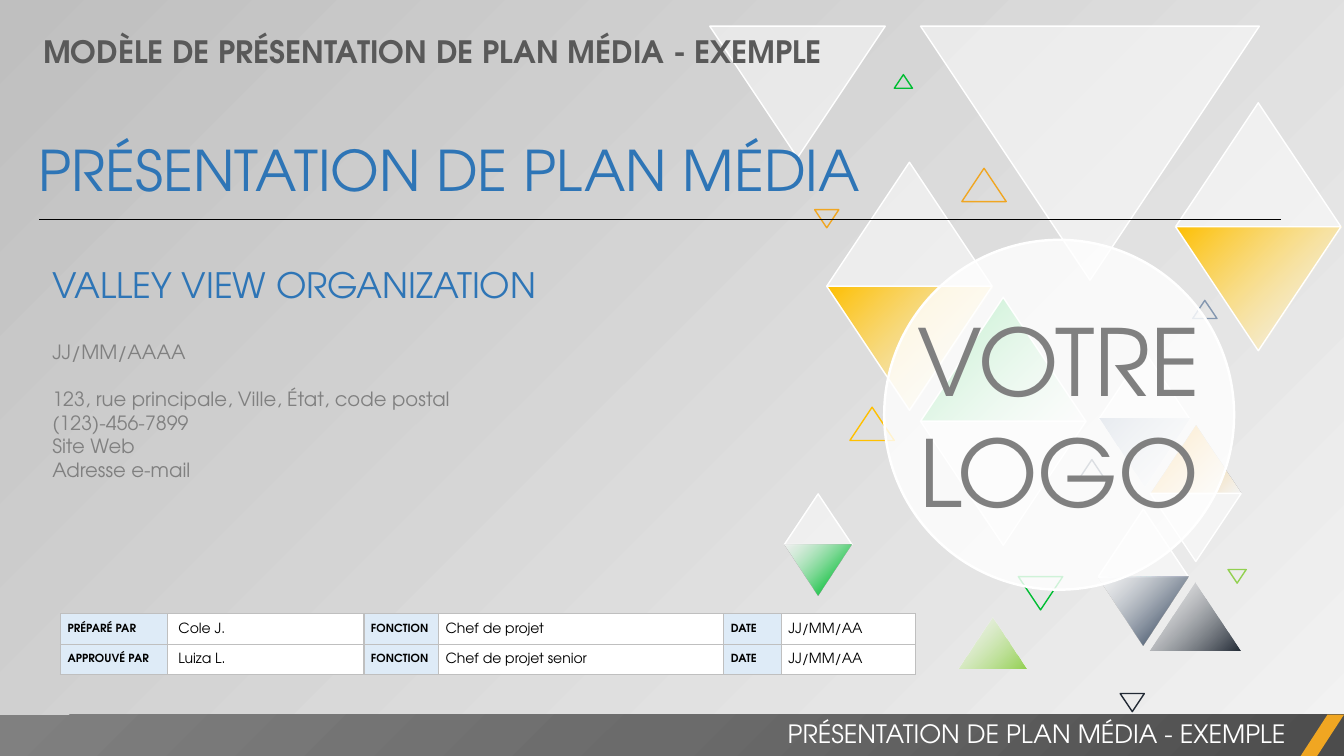
from dataclasses import dataclass

from pptx import Presentation, util as u
from pptx.dml.color import RGBColor
from pptx.enum import shapes, text
from pptx.oxml import ns, parse_xml


@dataclass(frozen=True)
class Theme:
    font: str = "TeX Gyre Adventor"
    white: str = "FFFFFF"
    black: str = "000000"
    blue: str = "2E75B6"
    heading: str = "595959"
    gray: str = "808080"
    border: str = "BFBFBF"
    backdrop: str = "F2F2F2"
    band_dark: str = "4C4C4C"
    band_middle: str = "6B6B6B"
    label: str = "DEEBF7"
    orange: str = "F0A622"
    gold: str = "FFC000"
    green: str = "00BD32"
    lime: str = "92D050"
    navy: str = "44546A"
    steel: str = "8497B0"
    ink: str = "222A35"
    title_size: int = 40
    logo_size: int = 66
    organization_size: int = 25
    heading_size: int = 22
    footer_size: int = 18
    body_size: int = 14
    cell_size: int = 10
    label_size: int = 8


THEME = Theme()
COLUMNS, ROWS = 1333, 750
CELL = u.Inches(0.01)  # side of one square grid cell
DIAGONAL = '<a:lin ang="13500000" scaled="0"/>'
CORNER = '<a:path path="circle"><a:fillToRect l="100000" t="100000"/></a:path>'


@dataclass(frozen=True)
class Box:
    """A region measured in grid columns and rows."""
    left: float
    top: float
    width: float
    height: float

    def inner(self, left, top, width, height):
        return Box(self.left + left, self.top + top, width, height)

    def lengths(self):
        return [round(n * CELL) for n in (self.left, self.top, self.width, self.height)]


def rgb(color):
    return RGBColor.from_string(color)


def write(frame, content, size, color, bold=False, align=text.PP_ALIGN.LEFT,
          before=0, spacing=None):
    paragraph = frame.add_paragraph() if frame.text else frame.paragraphs[0]
    paragraph.alignment, paragraph.space_before = align, u.Pt(before)
    if spacing:
        paragraph.line_spacing = spacing
    run = paragraph.add_run()
    run.text = content
    run.font.name, run.font.size, run.font.bold = THEME.font, u.Pt(size), bold
    run.font.color.rgb = rgb(color)


def text_box(slide, box):
    frame = slide.shapes.add_textbox(*box.lengths()).text_frame
    frame.word_wrap = True
    return frame


def paint_gradient(fill, properties, stops, direction):
    """Stops are (position %, color, opacity %)."""
    fill.gradient()
    marks = "".join(
        f'<a:gs pos="{position * 1000}"><a:srgbClr val="{color}">'
        f'<a:alpha val="{opacity * 1000}"/></a:srgbClr></a:gs>'
        for position, color, opacity in stops)
    properties.replace(properties.find(ns.qn("a:gradFill")), parse_xml(
        f'<a:gradFill {ns.nsdecls("a")} rotWithShape="1"><a:gsLst>{marks}</a:gsLst>'
        f'{direction}</a:gradFill>'))


def add_shape(slide, kind, box, fill=None, opacity=100, line=None, weight=1):
    """Fill is a color, a list of gradient stops or None."""
    shape = slide.shapes.add_shape(kind, *box.lengths())
    shape.shadow.inherit = False
    if fill is None:
        shape.fill.background()
    elif isinstance(fill, list):
        paint_gradient(shape.fill, shape.element.spPr, fill, DIAGONAL)
    else:
        shape.fill.solid()
        shape.fill.fore_color.rgb = rgb(fill)
        color = shape.element.spPr.find(ns.qn("a:solidFill"))[0]
        color.append(parse_xml(f'<a:alpha {ns.nsdecls("a")} val="{opacity * 1000}"/>'))
    if line:
        shape.line.color.rgb, shape.line.width = rgb(line), u.Pt(weight)
    else:
        shape.line.fill.background()
    return shape


def triangle(slide, box, left, top, width, down, **style):
    shape = add_shape(slide, shapes.MSO_SHAPE.ISOSCELES_TRIANGLE,
                      box.inner(left, top, width, width * 0.75), **style)
    shape.rotation = 180 if down else 0


def triangle_field(slide, box):
    def fade_out(color):
        return [(0, color, 100), (100, THEME.white, 50)]

    def fade_in(color):
        return [(0, THEME.white, 50), (82, color, 100)]

    def filled(left, top, width, down, fill):
        outlined = width > 100 or fill == THEME.white
        triangle(slide, box, left, top, width, down, fill=fill,
                 opacity=50, line=THEME.white if outlined else None)

    # Diamonds: one triangle above its mirror
    for left, top, width, upper, lower in (
            (120, 161, 164, THEME.white, fade_out(THEME.gold)),
            (213, 295, 164, fade_in(THEME.green), THEME.white),
            (389, 505, 90, THEME.white, fade_in(THEME.navy)),
            (390, 348, 90, THEME.white, fade_out(THEME.steel)),
            (441, 422, 90, fade_in(THEME.orange), THEME.white),
            (78, 490, 67, THEME.white, fade_in(THEME.green)),
            (466, 102, 164, THEME.white, fade_out(THEME.gold))):
        filled(left, top, width, False, upper)
        filled(left, top + width * 0.75, width, True, lower)
    # Single filled triangles
    filled(213, 26, 336, True, THEME.white)
    filled(4, 26, 174, True, THEME.white)
    filled(440, 578, 90, False, fade_out(THEME.ink))
    filled(251, 613, 67, False, fade_out(THEME.lime))
    # Small outlines
    for left, top, width, down, color in (
            (310, 572, 44, True, THEME.green), (143, 404, 44, False, THEME.gold),
            (371, 456, 24, False, THEME.navy), (411, 688, 24, True, THEME.ink),
            (108, 208, 24, True, THEME.orange), (483, 298, 24, False, THEME.steel),
            (187, 74, 18, False, THEME.green), (518, 565, 18, True, THEME.lime),
            (254, 167, 44, False, THEME.orange)):
        triangle(slide, box, left, top, width, down, line=color)


def header(slide, box):
    write(text_box(slide, box.inner(5, 0, 905, 47)),
          "MODÈLE DE PRÉSENTATION DE PLAN MÉDIA - EXEMPLE",
          THEME.heading_size, THEME.heading, bold=True)
    # Title, brought in front of the triangles
    title = slide.shapes.title
    title.left, title.top, title.width, title.height = box.inner(0, 101, 1255, 77).lengths()
    frame = title.text_frame
    frame.auto_size, frame.vertical_anchor = text.MSO_AUTO_SIZE.NONE, text.MSO_ANCHOR.TOP
    write(frame, "PRÉSENTATION DE PLAN MÉDIA", THEME.title_size, THEME.blue)
    slide.shapes.element.append(title.element)
    # Rule under the title
    left, top, width, _ = box.inner(11, 190, 1232, 0).lengths()
    rule = slide.shapes.add_connector(
        shapes.MSO_CONNECTOR.STRAIGHT, left, top, left + width, top)
    rule.line.color.rgb, rule.line.width = rgb(THEME.black), u.Pt(0.5)
    rule.element.spPr.append(parse_xml(f'<a:effectLst {ns.nsdecls("a")}/>'))


def contact_details(slide, box):
    frame = text_box(slide, box)
    write(frame, "VALLEY VIEW ORGANIZATION", THEME.organization_size, THEME.blue)
    for line, before in (("JJ/MM/AAAA", 24.2),
                         ("123, rue principale, Ville, État, code postal", 16.9),
                         ("(123)-456-7899", 0), ("Site Web", 0), ("Adresse e-mail", 0)):
        write(frame, line, THEME.body_size, THEME.gray, before=before)


def logo_disc(slide, box):
    disc = add_shape(slide, shapes.MSO_SHAPE.OVAL, box, fill=THEME.white,
                     opacity=81, line=THEME.white, weight=1.75)
    frame = disc.text_frame
    frame.word_wrap, frame.vertical_anchor = False, text.MSO_ANCHOR.MIDDLE
    frame.margin_left = frame.margin_right = frame.margin_top = frame.margin_bottom = 0
    for word in ("VOTRE", "LOGO"):
        write(frame, word, THEME.logo_size, THEME.gray, align=text.PP_ALIGN.CENTER)


def approval_table(slide, box):
    rows = (("PRÉPARÉ PAR", "Cole J.", "FONCTION", "Chef de projet", "DATE", "JJ/MM/AA"),
            ("APPROUVÉ PAR", "Luiza L.", "FONCTION", "Chef de projet senior", "DATE", "JJ/MM/AA"))
    holder = slide.shapes.add_table(len(rows), len(rows[0]), *box.lengths())
    table = holder.table
    table.first_row = table.horz_banding = False
    for column, width in zip(table.columns, (106, 195, 74, 283, 57, 133)):
        column.width = width * CELL
    for row, values in enumerate(rows):
        for column, value in enumerate(values):
            cell, is_label = table.cell(row, column), column % 2 == 0
            cell.vertical_anchor = text.MSO_ANCHOR.MIDDLE
            cell.margin_left, cell.margin_right = (11 if column == 1 else 7) * CELL, 7 * CELL
            cell.margin_top = cell.margin_bottom = 0
            cell.fill.solid()
            cell.fill.fore_color.rgb = rgb(THEME.label if is_label else THEME.white)
            write(cell.text_frame, value, THEME.label_size if is_label else THEME.cell_size,
                  THEME.black, bold=is_label, spacing=1.07)
    # Cell borders, which go ahead of the fill
    for properties in list(holder.element.iter(ns.qn("a:tcPr"))):
        for place, side in enumerate("LRTB"):
            properties.insert(place, parse_xml(
                f'<a:ln{side} {ns.nsdecls("a")} w="12700"><a:solidFill>'
                f'<a:srgbClr val="{THEME.border}"/></a:solidFill></a:ln{side}>'))


def footer(slide, box):
    band = add_shape(slide, shapes.MSO_SHAPE.RECTANGLE, box, fill=THEME.gray)
    paint_gradient(band.fill, band.element.spPr,
                   [(0, THEME.band_dark, 100), (50, THEME.band_middle, 100),
                    (100, THEME.gray, 100)], CORNER)
    accent = add_shape(slide, shapes.MSO_SHAPE.PARALLELOGRAM,
                       box.inner(box.width - 43, 0, 43, box.height), fill=THEME.orange)
    accent.adjustments[0] = 0.65
    write(text_box(slide, box.inner(525, -1, 760, 40)), "PRÉSENTATION DE PLAN MÉDIA - EXEMPLE",
          THEME.footer_size, THEME.white, align=text.PP_ALIGN.RIGHT)


def cover(presentation):
    slide = presentation.slides.add_slide(presentation.slide_layouts[5])
    fill = slide.background.fill
    fill.solid()
    paint_gradient(fill, slide.element.find(".//" + ns.qn("p:bgPr")),
                   [(0, THEME.backdrop, 40), (100, THEME.border, 100)], DIAGONAL)
    triangle_field(slide, Box(700, 0, COLUMNS - 700, ROWS))
    footer(slide, Box(0, 709, COLUMNS, ROWS - 709))
    header(slide, Box(28, 28, 1255, 190))
    contact_details(slide, Box(42, 257, 908, 227))
    logo_disc(slide, Box(877, 238, 347, 347))
    approval_table(slide, Box(60, 609, 848, 60))


def main():
    presentation = Presentation()
    presentation.slide_width, presentation.slide_height = COLUMNS * CELL, ROWS * CELL
    cover(presentation)
    presentation.save("out.pptx")


if __name__ == "__main__":
    main()
